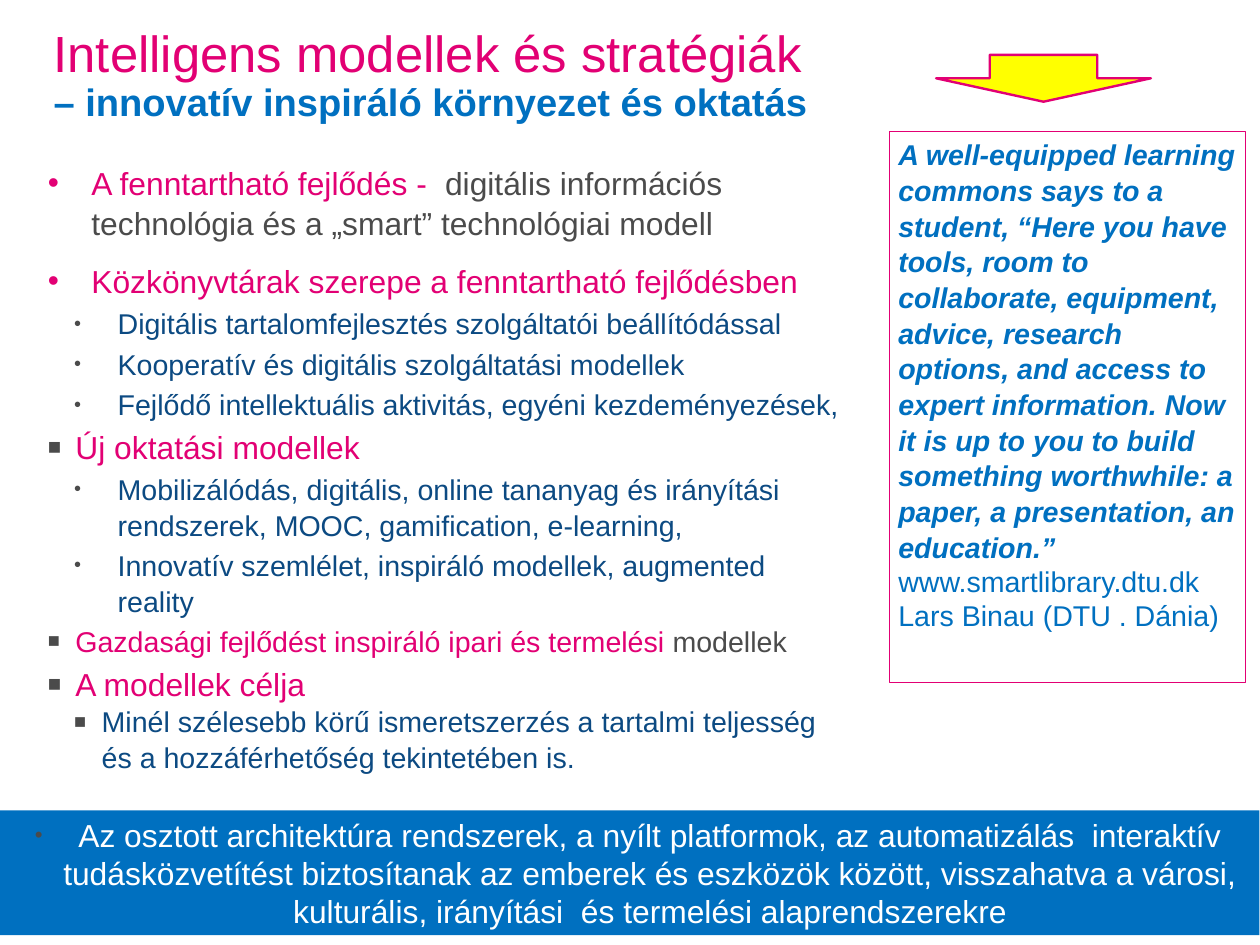
from lxml import etree
from pptx import Presentation
from pptx.dml.color import RGBColor
from pptx.enum.shapes import MSO_SHAPE
from pptx.enum.text import MSO_ANCHOR, PP_ALIGN
from pptx.oxml.ns import qn
from pptx.util import Emu, Inches, Pt

RECTANGLE, DOWN_ARROW = MSO_SHAPE.RECTANGLE, MSO_SHAPE.DOWN_ARROW
TOP, MIDDLE = MSO_ANCHOR.TOP, MSO_ANCHOR.MIDDLE
LEFT, CENTER = PP_ALIGN.LEFT, PP_ALIGN.CENTER

MAGENTA = RGBColor(0xE2, 0x00, 0x74)
BLUE = RGBColor(0x00, 0x70, 0xC0)
NAVY = RGBColor(0x0C, 0x4A, 0x82)
GRAY = RGBColor(0x4B, 0x4B, 0x4B)
YELLOW = RGBColor(0xFF, 0xFF, 0x00)
WHITE = RGBColor(0xFF, 0xFF, 0xFF)

FONT = "Arial"
# 28 by 21 cm page, on the 1/576 inch grid
SLIDE_WIDTH, SLIDE_HEIGHT = Emu(10080625), Emu(7559675)
BODY_SPACING = 1.04

# Each style: bullet, its colour and size in percent, indent, hanging, space before
STYLES = {
    "topic": ("•", MAGENTA, 100, 0.38, 0.38, 12),
    "section": ("■", GRAY, 70, 0.24, 0.24, 3),
    "detail": ("•", GRAY, 70, 0.61, 0.38, 3),
    "goal": ("■", GRAY, 70, 0.47, 0.24, 0),
    "summary": ("•", GRAY, 70, 0.38, 0.38, 0),
}

OUTLINE = [
    ("topic", 20, [("A fenntartható fejlődés - ", MAGENTA),
                   (" digitális információs technológia és a „smart” technológiai modell", GRAY)]),
    ("topic", 20, [("Közkönyvtárak szerepe a fenntartható fejlődésben", MAGENTA)]),
    ("detail", 18, [("Digitális tartalomfejlesztés szolgáltatói beállítódással", NAVY)]),
    ("detail", 18, [("Kooperatív és digitális szolgáltatási modellek", NAVY)]),
    ("detail", 18, [("Fejlődő intellektuális aktivitás, egyéni kezdeményezések,", NAVY)]),
    ("section", 20, [("Új oktatási modellek", MAGENTA)]),
    ("detail", 18, [("Mobilizálódás, digitális, online tananyag és irányítási rendszerek, "
                     "MOOC, gamification, e-learning,", NAVY)]),
    ("detail", 18, [("Innovatív szemlélet, inspiráló modellek, augmented reality", NAVY)]),
    ("section", 18, [("Gazdasági fejlődést inspiráló ipari és termelési ", MAGENTA),
                     ("modellek", GRAY)]),
    ("section", 20, [("A modellek célja", MAGENTA)]),
    ("goal", 18, [("Minél szélesebb körű ismeretszerzés a tartalmi teljesség "
                   "és a hozzáférhetőség tekintetében is.", NAVY)]),
]

QUOTE = ("A well-equipped learning commons says to a student, “Here you have tools, room to "
         "collaborate, equipment, advice, research options, and access to expert information. "
         "Now it is up to you to build something worthwhile: a paper, a presentation, "
         "an education.”")
QUOTE_SOURCES = ["www.smartlibrary.dtu.dk", "Lars Binau (DTU . Dánia)"]

SUMMARY = ("Az osztott architektúra rendszerek, a nyílt platformok, az automatizálás  interaktív "
           "tudásközvetítést biztosítanak az emberek és eszközök között, visszahatva a városi, "
           "kulturális, irányítási  és termelési alaprendszerekre")


def set_frame(shape, margins=(0, 0), anchor=TOP):
    frame = shape.text_frame
    across, down = map(Inches, margins)
    layout = {"margin_left": across, "margin_right": across, "margin_top": down,
              "margin_bottom": down, "word_wrap": True, "vertical_anchor": anchor}
    for name, value in layout.items():
        setattr(frame, name, value)
    return frame


def add_block(slide, kind, box, fill=None, line=None, weight=0):
    """Add a flat preset shape; a missing fill or line is left empty."""
    shape = slide.shapes.add_shape(kind, *map(Inches, box))
    shape.shadow.inherit = False
    if fill is None:
        shape.fill.background()
    else:
        shape.fill.solid()
        shape.fill.fore_color.rgb = fill
    if line is None:
        shape.line.fill.background()
    else:
        shape.line.color.rgb = line
        shape.line.width = Pt(weight)
    return shape


def next_para(frame, alignment=LEFT):
    """Use the empty first paragraph, then append further ones."""
    first = frame.paragraphs[0]
    para = frame.add_paragraph() if first.runs else first
    para.alignment = alignment
    return para


def add_span(para, text, size, color, bold=False, italic=False):
    span = para.add_run()
    span.text = text
    font_format = {"name": FONT, "size": Pt(size), "bold": bold, "italic": italic}
    for name, value in font_format.items():
        setattr(span.font, name, value)
    span.font.color.rgb = color


def set_bullet(para, style):
    """Apply the bullet and the indents of a named style."""
    char, color, percent, indent, hanging, _ = STYLES[style]
    props = para._p.get_or_add_pPr()
    props.set("marL", str(Inches(indent)))
    props.set("indent", str(-Inches(hanging)))
    bullet_color = etree.SubElement(props, qn("a:buClr"))
    etree.SubElement(bullet_color, qn("a:srgbClr"), val=str(color))
    etree.SubElement(props, qn("a:buSzPct"), val=str(percent * 1000))
    etree.SubElement(props, qn("a:buFont"), typeface=FONT)
    etree.SubElement(props, qn("a:buChar"), char=char)


def add_title(slide, box):
    frame = set_frame(slide.shapes.add_textbox(*map(Inches, box)))
    para = next_para(frame)
    para.line_spacing = 0.9
    add_span(para, "Intelligens modellek és stratégiák ", 32, MAGENTA)
    para.add_line_break()
    add_span(para, "– innovatív inspiráló környezet és oktatás", 24, BLUE, bold=True)


def add_outline(slide, box):
    frame = set_frame(add_block(slide, RECTANGLE, box, WHITE))
    for position, (style, size, spans) in enumerate(OUTLINE):
        para = next_para(frame)
        set_bullet(para, style)
        para.line_spacing = BODY_SPACING
        para.space_before = Pt(STYLES[style][-1] if position else 0)
        for text, color in spans:
            add_span(para, text, size, color)


def add_quote(slide, box):
    """Add the framed quotation with the arrow that points down to it."""
    left, top, _, _ = box
    frame = set_frame(add_block(slide, RECTANGLE, box, line=MAGENTA, weight=0.75), (0.08, 0.04))
    para = next_para(frame)
    para.line_spacing = BODY_SPACING
    add_span(para, QUOTE, 18, BLUE, bold=True, italic=True)
    for source in QUOTE_SOURCES:
        add_span(next_para(frame), source, 18, BLUE)
    add_block(slide, DOWN_ARROW, (left + 0.41, top - 0.67, 1.88, 0.41), YELLOW, MAGENTA, 1.5)


def add_summary(slide, box):
    band = add_block(slide, RECTANGLE, box, BLUE)
    para = next_para(set_frame(band, (0.08, 0.04), MIDDLE), CENTER)
    set_bullet(para, "summary")
    add_span(para, SUMMARY, 20, WHITE)


def main():
    deck = Presentation()
    deck.slide_width, deck.slide_height = SLIDE_WIDTH, SLIDE_HEIGHT
    slide = deck.slides.add_slide(deck.slide_layouts[6])
    add_title(slide, (0.47, 0.25, 10.24, 0.64))
    add_outline(slide, (0.42, 1.42, 6.94, 6.14))
    add_quote(slide, (7.78, 1.15, 3.12, 4.82))
    add_summary(slide, (-0.02, 7.09, 11.04, 1.09))
    deck.save("out.pptx")


if __name__ == "__main__":
    main()
